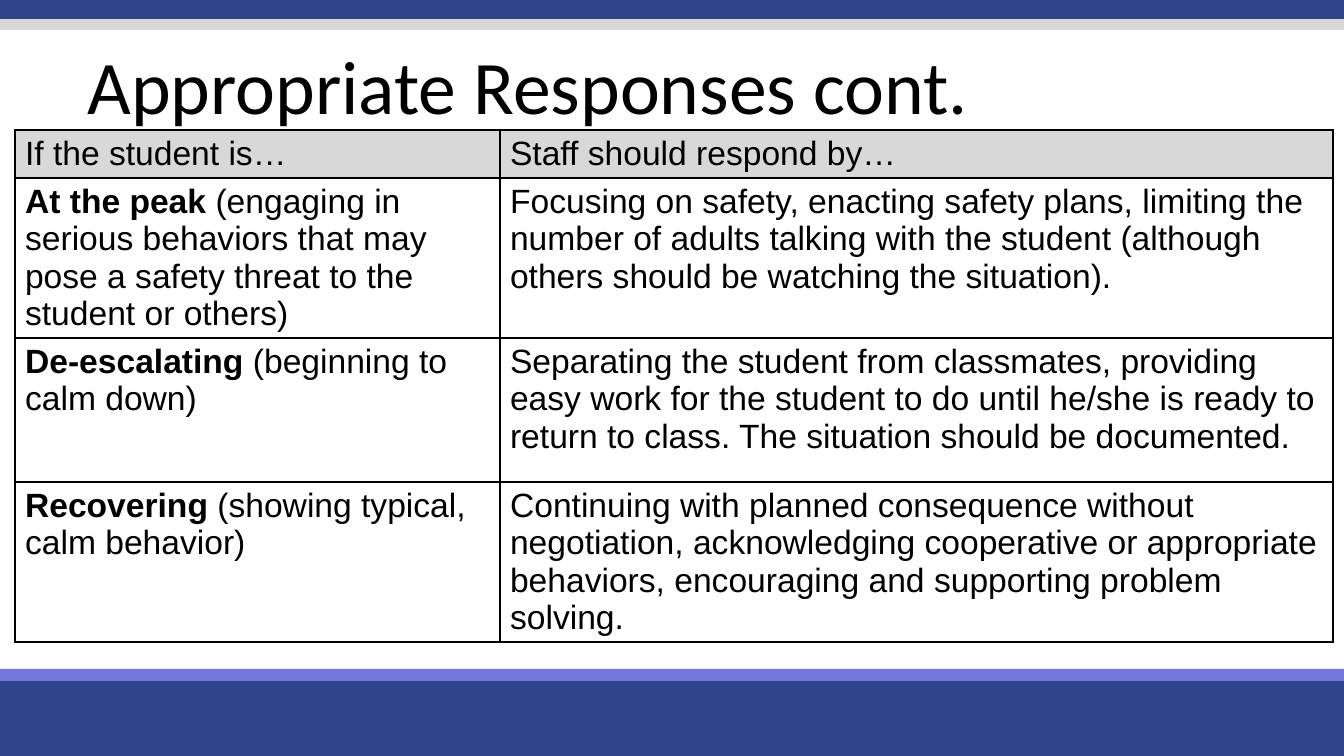
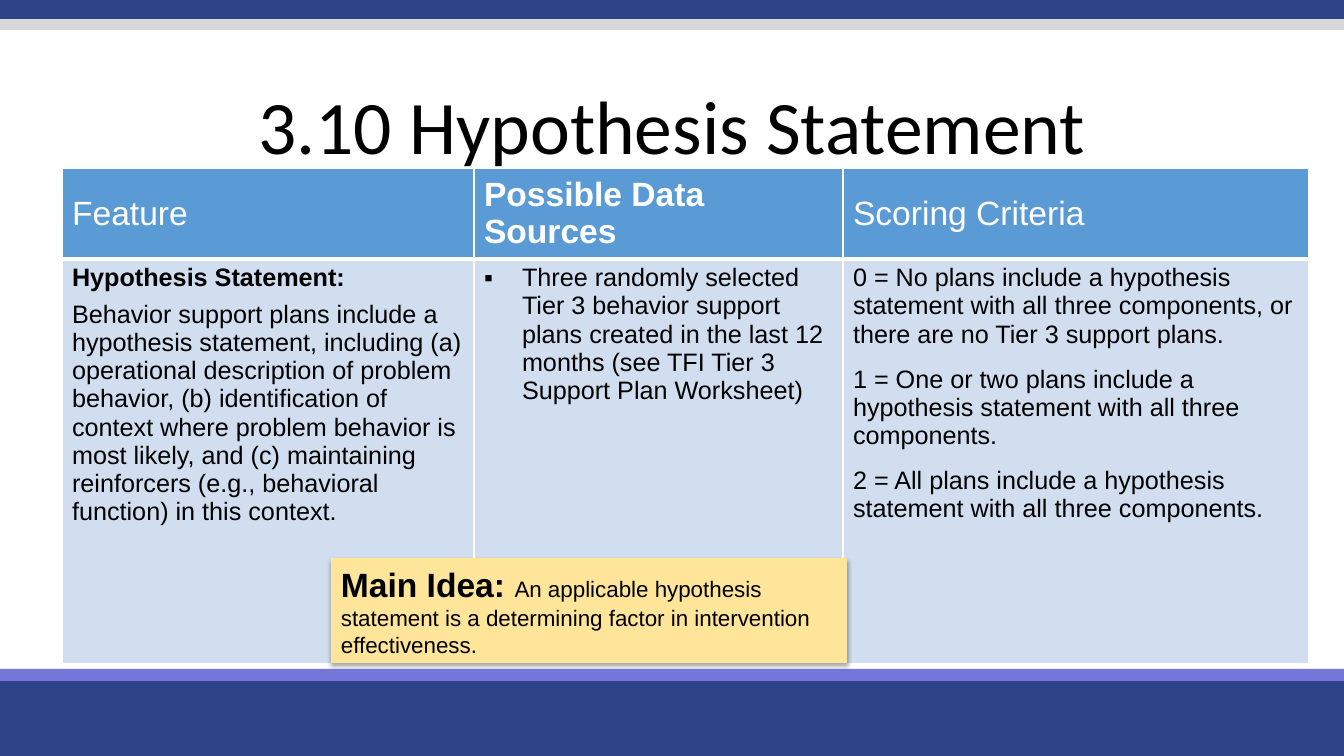
from lxml import etree
from pptx import Presentation
from pptx.dml.color import RGBColor
from pptx.enum.shapes import MSO_SHAPE
from pptx.enum.text import MSO_ANCHOR, MSO_AUTO_SIZE, PP_ALIGN
from pptx.oxml.ns import qn
from pptx.util import Emu, Pt

RECTANGLE = MSO_SHAPE.RECTANGLE
MIDDLE, TOP = MSO_ANCHOR.MIDDLE, MSO_ANCHOR.TOP
LEFT, CENTER = PP_ALIGN.LEFT, PP_ALIGN.CENTER
GROW = MSO_AUTO_SIZE.SHAPE_TO_FIT_TEXT

BLACK, WHITE = "000000", "FFFFFF"
NAVY, VIOLET, GREY = "2E4488", "7476DA", "D8D8D8"
BLUE, PALE_BLUE, YELLOW = "5B9BD5", "D0DEEF", "FEE599"
BODY_FONT, TITLE_FONT = "Arial", "Calibri"

WIDTH, HEIGHT = 1344, 756
BULLET_INDENT = 38
BANDS = [(675, 81, NAVY), (669, 12, VIOLET), (-3, 22, NAVY), (19, 11, GREY)]

RESPONSES = [
    ("At the peak ",
     "(engaging in serious behaviors that may pose a safety threat to the student or others)",
     "Focusing on safety, enacting safety plans, limiting the number of adults talking "
     "with the student (although others should be watching the situation)."),
    ("De-escalating ",
     "(beginning to calm down)",
     "Separating the student from classmates, providing easy work for the student to do "
     "until he/she is ready to return to class. The situation should be documented."),
    ("Recovering ",
     "(showing typical, calm behavior)",
     "Continuing with planned consequence without negotiation, acknowledging cooperative "
     "or appropriate behaviors, encouraging and supporting problem solving."),
]
FEATURE = (
    "Behavior support plans include a hypothesis statement, including (a) operational "
    "description of problem behavior, (b) identification of context where problem behavior "
    "is most likely, and (c) maintaining reinforcers (e.g., behavioral function) in this context."
)
DATA_SOURCE = (
    "Three randomly selected Tier 3 behavior support plans created in the last 12 months "
    "(see TFI Tier 3 Support Plan Worksheet)"
)
CRITERIA = [
    "0 = No plans include a hypothesis statement with all three components, "
    "or there are no Tier 3 support plans.",
    "1 = One or two plans include a hypothesis statement with all three components.",
    "2 = All plans include a hypothesis statement with all three components.",
]
MAIN_IDEA = "An applicable hypothesis statement is a determining factor in intervention effectiveness."


def px(length):
    """Turn pixels into EMU."""
    return Emu(round(length * 914400 / 100.8))


def color(value):
    """Turn a hex string into a colour."""
    return RGBColor.from_string(value)


def add_child(parent, tag, **attributes):
    """Append an XML element with the given attributes."""
    return etree.SubElement(parent, qn(tag), {key: str(value) for key, value in attributes.items()})


def add_run(paragraph, text, size, bold, ink, font):
    """Append one formatted run."""
    run = paragraph.add_run()
    run.text = text
    run.font.name = font
    run.font.size = Pt(size)
    run.font.bold = bold
    run.font.color.rgb = color(ink)


def add_bullet(paragraph, symbol):
    """Give a paragraph a hanging bullet."""
    properties = paragraph._p.get_or_add_pPr()
    properties.set("marL", str(px(BULLET_INDENT)))
    properties.set("indent", str(-px(BULLET_INDENT)))
    add_child(add_child(properties, "a:buClr"), "a:srgbClr", val=BLACK)
    add_child(properties, "a:buFont", typeface=BODY_FONT)
    add_child(properties, "a:buChar", char=symbol)


def write(frame, text, lead="", size=24, lead_size=24, bold=False, ink=BLACK,
          font=BODY_FONT, align=LEFT, before=0, spacing=1.0, bullet=None):
    """Add a paragraph, with an optional bold lead-in, to a text frame."""
    paragraph = frame.add_paragraph() if frame.text else frame.paragraphs[0]
    paragraph.alignment = align
    paragraph.line_spacing = spacing
    paragraph.space_before = Pt(before)
    if bullet:
        add_bullet(paragraph, bullet)
    if lead:
        add_run(paragraph, lead, lead_size, True, ink, font)
    add_run(paragraph, text, size, bold, ink, font)


def add_box(slide, left, top, width, height, fill):
    """Add a plain filled rectangle."""
    shape = slide.shapes.add_shape(RECTANGLE, px(left), px(top), px(width), px(height))
    shape.shadow.inherit = False
    shape.fill.solid()
    shape.fill.fore_color.rgb = color(fill)
    shape.line.fill.background()
    return shape


def add_base(presentation):
    """Add a blank slide with the shared bands."""
    slide = presentation.slides.add_slide(presentation.slide_layouts[6])
    for top, height, fill in BANDS:
        add_box(slide, 0, top, WIDTH, height, fill)
    return slide


def add_title(slide, text, top, width):
    """Add a centred title."""
    box = slide.shapes.add_textbox(0, px(top), px(width), px(119))
    frame = box.text_frame
    frame.word_wrap = True
    frame.vertical_anchor = MIDDLE
    write(frame, text, size=54, font=TITLE_FONT, align=CENTER, spacing=0.9)


def add_table(slide, left, top, columns, rows):
    """Add a table without built-in banding."""
    frame = slide.shapes.add_table(len(rows), len(columns), px(left), px(top),
                                   px(sum(columns)), px(sum(rows)))
    table = frame.table
    table.first_row = table.horz_banding = False
    for column, width in zip(table.columns, columns):
        column.width = px(width)
    for row, height in zip(table.rows, rows):
        row.height = px(height)
    return table


def style_cell(cell, fill, border, anchor=TOP, above=1, below=1):
    """Set fill, borders and anchor of a cell and return its text frame."""
    cell.fill.solid()
    cell.fill.fore_color.rgb = color(fill)
    cell.vertical_anchor = anchor
    properties = cell._tc.get_or_add_tcPr()
    sides = [("a:lnL", 1), ("a:lnR", 1), ("a:lnT", above), ("a:lnB", below)]
    for position, (tag, points) in enumerate(sides):
        line = add_child(properties, tag, w=Pt(points))
        add_child(add_child(line, "a:solidFill"), "a:srgbClr", val=border)
        properties.insert(position, line)
    return cell.text_frame


def add_shadow(shape):
    """Give a shape a soft shadow straight below it."""
    effects = shape._element.spPr.find(qn("a:effectLst"))
    shadow = add_child(effects, "a:outerShdw", blurRad=Pt(3.1), dist=Pt(1.8),
                       dir=90 * 60000, algn="t", rotWithShape=0)
    add_child(add_child(shadow, "a:srgbClr", val=BLACK), "a:alpha", val=35000)


def build_responses(presentation):
    """Build the slide on responses to each stage."""
    slide = add_base(presentation)
    table = add_table(slide, 15, 130, [485, 833], [48, 160, 144, 160])
    for column, heading in enumerate(["If the student is…", "Staff should respond by…"]):
        write(style_cell(table.cell(0, column), GREY, BLACK, MIDDLE), heading)
    for row, (stage, description, response) in enumerate(RESPONSES, 1):
        write(style_cell(table.cell(row, 0), WHITE, BLACK), description, lead=stage)
        write(style_cell(table.cell(row, 1), WHITE, BLACK), response)
    add_title(slide, "Appropriate Responses cont.", 30, 1056)


def build_hypothesis(presentation):
    """Build the slide on the hypothesis statement."""
    slide = add_base(presentation)
    add_title(slide, "3.10 Hypothesis Statement", 70, WIDTH)
    table = add_table(slide, 62, 168, [412, 369, 466], [83, 405])
    headings = [("Feature", False), ("Possible Data Sources", True), ("Scoring Criteria", False)]
    for column, (heading, bold) in enumerate(headings):
        frame = style_cell(table.cell(0, column), BLUE, WHITE, MIDDLE, below=3)
        write(frame, heading, bold=bold, ink=WHITE)
    feature, source, criteria = [
        style_cell(table.cell(1, column), PALE_BLUE, WHITE, above=3) for column in range(3)
    ]
    write(feature, "Hypothesis Statement:", size=18, bold=True)
    write(feature, FEATURE, size=18, before=6)
    write(source, DATA_SOURCE, size=18, bullet="▪")
    for index, criterion in enumerate(CRITERIA):
        write(criteria, criterion, size=18, before=12 if index else 0)

    callout = add_box(slide, 331, 558, 516, 105, YELLOW)
    add_shadow(callout)
    frame = callout.text_frame
    frame.word_wrap = True
    frame.auto_size = GROW
    frame.vertical_anchor = MIDDLE
    write(frame, MAIN_IDEA, lead="Main Idea: ", size=16)


def main():
    """Build and save the presentation."""
    presentation = Presentation()
    presentation.slide_width = px(WIDTH)
    presentation.slide_height = px(HEIGHT)
    build_responses(presentation)
    build_hypothesis(presentation)
    presentation.save("out.pptx")


if __name__ == "__main__":
    main()
